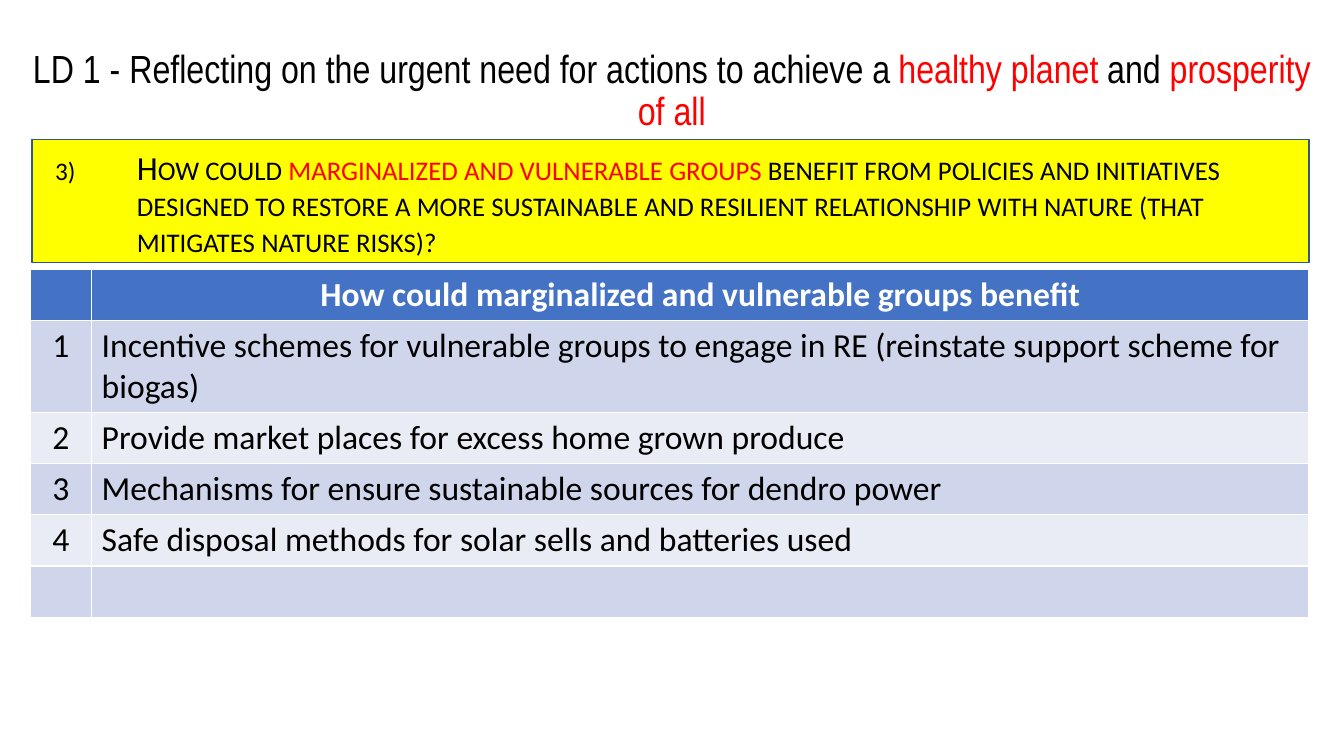
from dataclasses import dataclass

from lxml import etree
from pptx import Presentation
from pptx.dml.color import RGBColor
from pptx.enum.shapes import MSO_SHAPE
from pptx.enum.text import MSO_ANCHOR, MSO_AUTO_SIZE, PP_ALIGN
from pptx.oxml.ns import qn
from pptx.util import Cm, Pt

RECTANGLE = MSO_SHAPE.RECTANGLE
MIDDLE, TOP = MSO_ANCHOR.MIDDLE, MSO_ANCHOR.TOP
NO_AUTOFIT = MSO_AUTO_SIZE.NONE
LEFT, CENTER = PP_ALIGN.LEFT, PP_ALIGN.CENTER


@dataclass(frozen=True)
class Theme:
    text: str = "000000"
    accent: str = "FF0000"
    white: str = "FFFFFF"
    band: str = "FFFF00"
    band_line: str = "325491"
    header: str = "4472C4"
    odd_row: str = "CFD5EA"
    even_row: str = "E9EBF5"
    title_font: str = "Arial Narrow"
    body_font: str = "Calibri"
    title_size: int = 28
    body_size: int = 24


@dataclass(frozen=True)
class Box:
    left: float
    top: float
    width: float
    height: float

    def lengths(self) -> tuple:
        return Cm(self.left), Cm(self.top), Cm(self.width), Cm(self.height)


@dataclass(frozen=True)
class Span:
    text: str
    color: str


@dataclass(frozen=True)
class Benefit:
    number: str
    text: str
    height: float = 1.29


THEME = Theme()
TITLE_BOX = Box(0.33, 1.14, 33.2, 2.34)
BAND_BOX = Box(0.81, 3.51, 32.18, 3.1)
QUESTION_BOX = Box(1.14, 3.68, 30.38, 2.92)
HEADER_HEIGHT = 1.29
NUMBER_WIDTH, BENEFIT_WIDTH = 1.55, 30.68
TABLE_LEFT, TABLE_TOP = 0.76, 6.78

TITLE = [
    Span("LD 1 - Reflecting on the urgent need for actions to achieve a ", THEME.text),
    Span("healthy planet", THEME.accent),
    Span(" and ", THEME.text),
    Span("prosperity of all", THEME.accent),
]
QUESTION = [
    Span("How could ", THEME.text),
    Span("marginalized and vulnerable groups ", THEME.accent),
    Span("benefit from policies and initiatives designed to restore a more "
         "sustainable and resilient relationship with nature "
         "(that mitigates nature risks)?", THEME.text),
]
BENEFITS = [
    Benefit("1", "Incentive schemes for vulnerable groups to engage in RE "
                 "(reinstate support scheme for biogas)", 2.32),
    Benefit("2", "Provide market places for excess home grown produce"),
    Benefit("3", "Mechanisms for ensure sustainable sources for dendro power"),
    Benefit("4", "Safe disposal methods for solar sells and batteries used"),
    Benefit("", ""),
]


def write(frame, spans: list[Span], *, font: str = THEME.body_font,
          size: int = THEME.body_size, align=LEFT, bold: bool = False,
          small_caps: bool = False, line_spacing: float = 1.0):
    """Fill the first paragraph of a text frame and return it."""
    paragraph = frame.paragraphs[0]
    paragraph.alignment = align
    paragraph.line_spacing = line_spacing
    for span in spans:
        run = paragraph.add_run()
        run.text = span.text
        run.font.name = font
        run.font.size = Pt(size)
        run.font.bold = bold
        run.font.color.rgb = RGBColor.from_string(span.color)
        if small_caps:
            run.font._element.set("cap", "small")
    return paragraph


def number_paragraph(paragraph, start: int, indent: float) -> None:
    properties = paragraph._p.get_or_add_pPr()
    properties.set("marL", str(Cm(indent)))
    properties.set("indent", str(-Cm(indent)))
    etree.SubElement(properties, qn("a:buSzPct"), val="75000")
    etree.SubElement(properties, qn("a:buAutoNum"), type="arabicParenR",
                     startAt=str(start))


def add_title(slide) -> None:
    title = slide.shapes.title
    title.left, title.top, title.width, title.height = TITLE_BOX.lengths()
    frame = title.text_frame
    frame.word_wrap = True
    frame.auto_size = NO_AUTOFIT
    frame.vertical_anchor = MIDDLE
    write(frame, TITLE, font=THEME.title_font, size=THEME.title_size,
          align=CENTER, line_spacing=0.9)


def add_question(slide) -> None:
    band = slide.shapes.add_shape(RECTANGLE, *BAND_BOX.lengths())
    band.shadow.inherit = False
    band.fill.solid()
    band.fill.fore_color.rgb = RGBColor.from_string(THEME.band)
    band.line.color.rgb = RGBColor.from_string(THEME.band_line)
    band.line.width = Pt(1)

    frame = slide.shapes.add_textbox(*QUESTION_BOX.lengths()).text_frame
    frame.word_wrap = True
    frame.vertical_anchor = TOP
    paragraph = write(frame, QUESTION, small_caps=True, line_spacing=0.9)
    paragraph.space_before = Pt(10)
    number_paragraph(paragraph, start=3, indent=2.06)


def fill_cell(cell, text: str, fill: str, *, color: str = THEME.text,
              align=LEFT, bold: bool = False) -> None:
    cell.fill.solid()
    cell.fill.fore_color.rgb = RGBColor.from_string(fill)
    if text:
        write(cell.text_frame, [Span(text, color)], align=align, bold=bold)


def add_benefits(slide) -> None:
    height = HEADER_HEIGHT + sum(benefit.height for benefit in BENEFITS)
    box = Box(TABLE_LEFT, TABLE_TOP, NUMBER_WIDTH + BENEFIT_WIDTH, height)
    table = slide.shapes.add_table(len(BENEFITS) + 1, 2, *box.lengths()).table
    table.columns[0].width = Cm(NUMBER_WIDTH)
    table.columns[1].width = Cm(BENEFIT_WIDTH)

    # Header row
    table.rows[0].height = Cm(HEADER_HEIGHT)
    headings = ("", "How could marginalized and vulnerable groups benefit")
    for column, heading in enumerate(headings):
        fill_cell(table.cell(0, column), heading, THEME.header,
                  color=THEME.white, align=CENTER, bold=True)

    # Numbered rows in alternating bands
    for row, benefit in enumerate(BENEFITS, start=1):
        fill = THEME.odd_row if row % 2 else THEME.even_row
        table.rows[row].height = Cm(benefit.height)
        fill_cell(table.cell(row, 0), benefit.number, fill, align=CENTER)
        fill_cell(table.cell(row, 1), benefit.text, fill)


def main() -> None:
    presentation = Presentation()
    presentation.slide_width, presentation.slide_height = Cm(33.87), Cm(19.05)
    title_only = presentation.slide_layouts[5]
    slide = presentation.slides.add_slide(title_only)
    add_question(slide)
    add_title(slide)
    add_benefits(slide)
    presentation.save("out.pptx")


if __name__ == "__main__":
    main()
